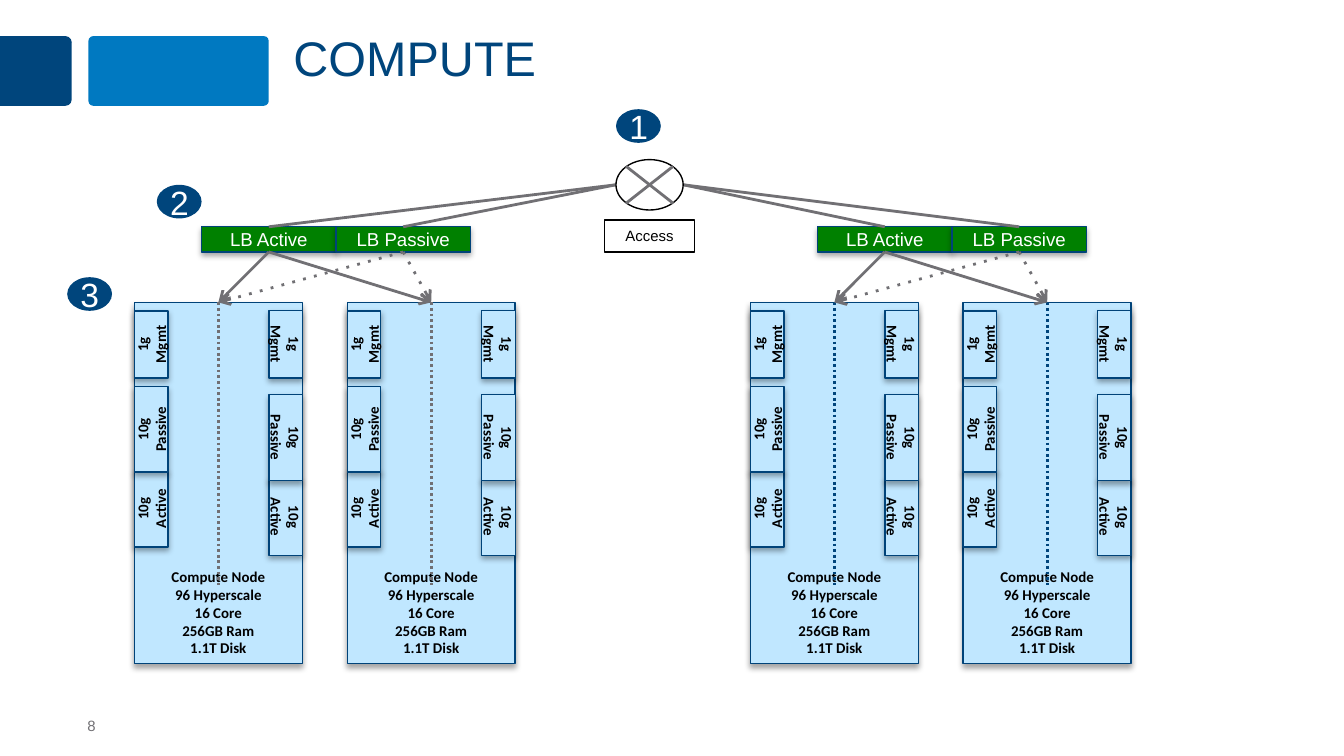
"""Build the compute slide: access network, load balancer pairs and compute nodes."""
from dataclasses import dataclass
from typing import NamedTuple

from lxml import etree
from pptx import Presentation
from pptx import util as u
from pptx.dml.color import RGBColor
from pptx.enum import shapes, text
from pptx.oxml.ns import qn

COLUMNS, ROWS = 120, 90
WIDTH, HEIGHT = u.Inches(10), u.Inches(5.625)


@dataclass(frozen=True)
class Theme:
    navy: str = "00457C"
    blue: str = "0079C1"
    border: str = "004379"
    pale: str = "C0E7FF"
    green: str = "008000"
    gray: str = "717074"
    black: str = "000000"
    white: str = "FFFFFF"
    heading_font: str = "Arial"
    node_font: str = "Calibri"
    title_size: float = 26
    badge_size: float = 18
    balancer_size: float = 10
    small_size: float = 8
    thin: float = 0.75
    thick: float = 1.5


class Box(NamedTuple):
    column: float
    row: float
    columns: float
    rows: float


class Point(NamedTuple):
    column: float
    row: float


class Port(NamedTuple):
    label: str
    left_row: float
    right_row: float
    rows: float


class Site(NamedTuple):
    balancer_column: float
    node_columns: tuple[float, float]
    access_point: Point
    divider_color: str


THEME = Theme()
NODE_ROW, NODE_COLUMNS, NODE_ROWS = 36, 15, 43
BALANCER_ROW, BALANCER_COLUMNS, BALANCER_ROWS = 27, 12, 3
PORT_COLUMNS, DIVIDER_END = 3, 69.6
NODE_TEXT = "Compute Node\n96 Hyperscale\n16 Core\n256GB Ram\n1.1T Disk"
PORTS = (Port("10g Active", 56, 57, 9.1), Port("10g Passive", 46, 47, 10.2), Port("1g Mgmt", 37, 37, 8))
SITES = (
    Site(18, (12, 31), Point(55, 22), THEME.gray),
    Site(73, (67, 86), Point(61, 22), THEME.navy),
)
BADGES = {"1": Point(55, 13), "2": Point(14, 22), "3": Point(6, 33)}


def across(columns: float) -> int:
    return round(WIDTH * columns / COLUMNS)


def down(rows: float) -> int:
    return round(HEIGHT * rows / ROWS)


def place(shape, box: Box, rotation: float = 0) -> None:
    """Fit a shape to its visible box, allowing for quarter turns."""
    left, top, width, height = across(box.column), down(box.row), across(box.columns), down(box.rows)
    if rotation in (90, 270):
        left, top = left + (width - height) // 2, top + (height - width) // 2
        width, height = height, width
    shape.left, shape.top, shape.width, shape.height = left, top, width, height
    shape.rotation = rotation


def write_text(shape, content: str, *, size: float = THEME.small_size, font: str = THEME.heading_font,
               color: str = THEME.black, bold: bool = False, align=text.PP_ALIGN.CENTER,
               anchor=text.MSO_ANCHOR.MIDDLE, margins: tuple[float, float] = (0.1, 0.05),
               spacing: float | None = None) -> None:
    frame = shape.text_frame
    frame.word_wrap = True
    frame.auto_size = text.MSO_AUTO_SIZE.NONE
    frame.vertical_anchor = anchor
    frame.margin_left = frame.margin_right = u.Inches(margins[0])
    frame.margin_top = frame.margin_bottom = u.Inches(margins[1])
    frame.text = content
    for paragraph in frame.paragraphs:
        paragraph.alignment = align
        if spacing:
            paragraph.line_spacing = spacing
        paragraph.font.size = u.Pt(size)
        paragraph.font.name = font
        paragraph.font.bold = bold
        paragraph.font.color.rgb = RGBColor.from_string(color)


def add_shadow(shape) -> None:
    effects = shape._element.spPr.find(qn("a:effectLst"))
    shadow = etree.SubElement(effects, qn("a:outerShdw"), blurRad=str(u.Pt(3.1)), dist=str(u.Pt(1.8)),
                              dir="5400000", rotWithShape="0")
    color = etree.SubElement(shadow, qn("a:srgbClr"), val=THEME.black)
    etree.SubElement(color, qn("a:alpha"), val="35000")


def add_block(slide, box: Box, *, kind=shapes.MSO_SHAPE.RECTANGLE, fill: str | None = None,
              line: str | None = None, rotation: float = 0, shadow: bool = False,
              adjustments: tuple[float, ...] = ()):
    shape = slide.shapes.add_shape(kind, 0, 0, 0, 0)
    place(shape, box, rotation)
    shape.shadow.inherit = False
    for index, value in enumerate(adjustments):
        shape.adjustments[index] = value
    if fill:
        shape.fill.solid()
        shape.fill.fore_color.rgb = RGBColor.from_string(fill)
    else:
        shape.fill.background()
    if line:
        shape.line.color.rgb = RGBColor.from_string(line)
        shape.line.width = u.Pt(THEME.thin)
    else:
        shape.line.fill.background()
    if shadow:
        add_shadow(shape)
    return shape


def add_line(slide, start: Point, end: Point, *, color: str = THEME.gray, dash: str | None = None,
             arrow: bool = False) -> None:
    connector = slide.shapes.add_connector(shapes.MSO_CONNECTOR.STRAIGHT, across(start.column), down(start.row),
                                           across(end.column), down(end.row))
    connector.line.color.rgb = RGBColor.from_string(color)
    connector.line.width = u.Pt(THEME.thick)
    properties = connector._element.spPr
    outline = properties.find(qn("a:ln"))
    if dash:
        etree.SubElement(outline, qn("a:prstDash"), val=dash)
    if arrow:
        etree.SubElement(outline, qn("a:tailEnd"), type="arrow")
    etree.SubElement(properties, qn("a:effectLst"))


def add_node(slide, column: float, divider_color: str) -> None:
    style = dict(fill=THEME.pale, line=THEME.border, shadow=True)
    words = dict(font=THEME.node_font, bold=True)
    node = add_block(slide, Box(column, NODE_ROW, NODE_COLUMNS, NODE_ROWS), **style)
    write_text(node, NODE_TEXT, anchor=text.MSO_ANCHOR.BOTTOM, **words)
    right_column = column + NODE_COLUMNS - PORT_COLUMNS
    for port in PORTS:
        for port_column, row, rotation in ((column, port.left_row, 270), (right_column, port.right_row, 90)):
            block = add_block(slide, Box(port_column, row, PORT_COLUMNS, port.rows), rotation=rotation, **style)
            write_text(block, port.label, **words)
    middle = column + NODE_COLUMNS / 2
    add_line(slide, Point(middle, NODE_ROW), Point(middle, DIVIDER_END), color=divider_color, dash="sysDot")


def add_site(slide, site: Site) -> None:
    for column in site.node_columns:
        add_node(slide, column, site.divider_color)
    for index, (label, dash) in enumerate((("LB Active", None), ("LB Passive", "dot"))):
        column = site.balancer_column + index * BALANCER_COLUMNS
        balancer = add_block(slide, Box(column, BALANCER_ROW, BALANCER_COLUMNS, BALANCER_ROWS),
                             fill=THEME.green, line=THEME.border, shadow=True)
        write_text(balancer, label, size=THEME.balancer_size, color=THEME.white)
        middle = column + BALANCER_COLUMNS / 2
        for node_column in site.node_columns:
            add_line(slide, Point(middle, BALANCER_ROW + BALANCER_ROWS),
                     Point(node_column + NODE_COLUMNS / 2, NODE_ROW), dash=dash, arrow=True)
        add_line(slide, Point(middle, BALANCER_ROW), site.access_point)


def add_access(slide) -> None:
    add_block(slide, Box(55, 19, 6, 6), kind=shapes.MSO_SHAPE.OVAL, fill=THEME.white, line=THEME.black)
    for top, bottom in ((19.8, 24.2), (24.2, 19.8)):
        add_line(slide, Point(55.9, top), Point(60.1, bottom))
    label = add_block(slide, Box(54, 26.2, 8, 3.8), line=THEME.black)
    write_text(label, "Access", anchor=text.MSO_ANCHOR.TOP)


def add_header(slide) -> None:
    add_block(slide, Box(0, 4.3, 6.4, 8.3), kind=shapes.MSO_SHAPE.ROUND_2_SAME_RECTANGLE, fill=THEME.navy,
              rotation=90, adjustments=(0.09, 0))
    add_block(slide, Box(7.9, 4.3, 16.1, 8.3), kind=shapes.MSO_SHAPE.ROUNDED_RECTANGLE, fill=THEME.blue,
              adjustments=(0.07,))
    title = slide.shapes.title
    place(title, Box(25, 3, 92, 10.9))
    write_text(title, "COMPUTE", size=THEME.title_size, color=THEME.navy, align=text.PP_ALIGN.LEFT,
               anchor=text.MSO_ANCHOR.TOP, spacing=0.95)
    number = slide.shapes.add_textbox(0, 0, 0, 0)
    place(number, Box(7.8, 85.3, 7.5, 2.1))
    write_text(number, "8", color=THEME.gray, align=text.PP_ALIGN.LEFT, margins=(0, 0))


def main() -> None:
    presentation = Presentation()
    presentation.slide_width, presentation.slide_height = WIDTH, HEIGHT
    slide = presentation.slides.add_slide(presentation.slide_layouts[5])
    add_header(slide)
    for site in SITES:
        add_site(slide, site)
    add_access(slide)
    for label, corner in BADGES.items():
        badge = add_block(slide, Box(*corner, 4, 4), kind=shapes.MSO_SHAPE.OVAL, fill=THEME.navy)
        write_text(badge, label, size=THEME.badge_size, color=THEME.white, margins=(0.05, 0.05))
    presentation.save("out.pptx")


if __name__ == "__main__":
    main()
